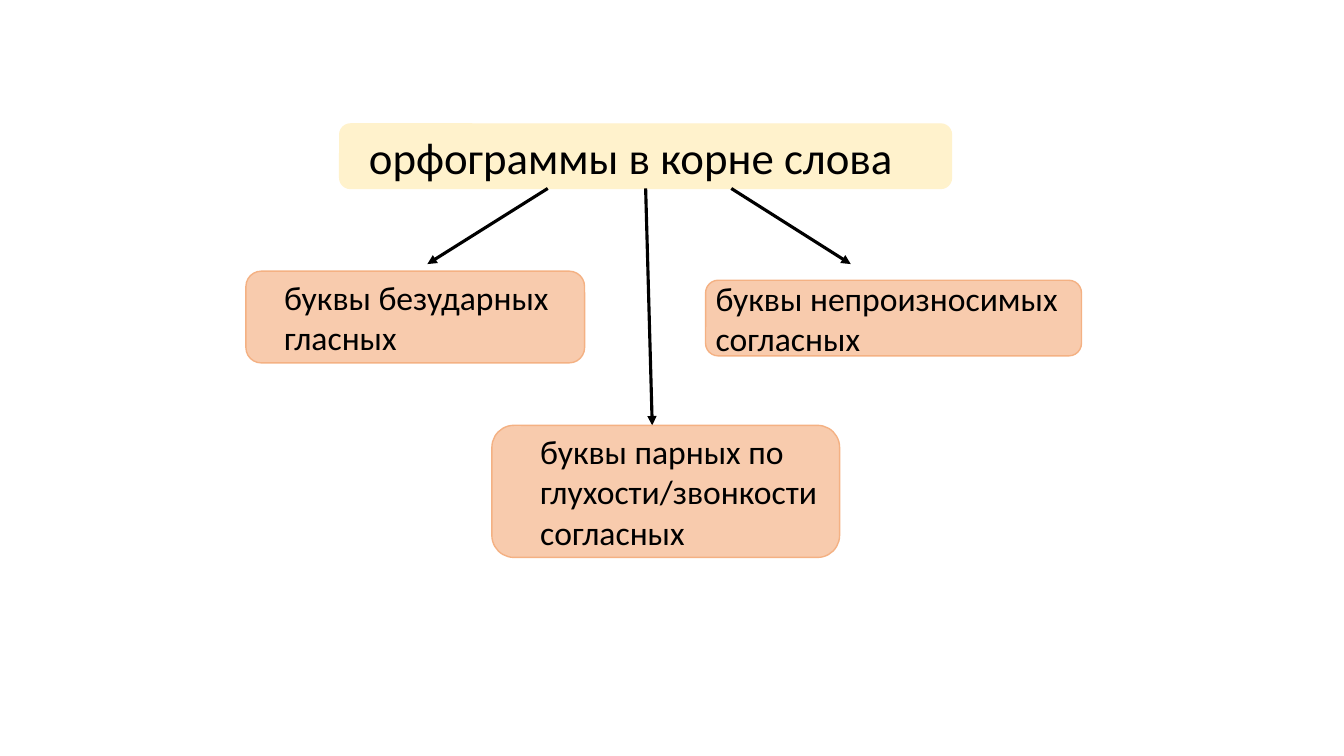
from dataclasses import dataclass

from lxml import etree
from pptx import Presentation
from pptx.dml.color import RGBColor
from pptx.enum.shapes import MSO_CONNECTOR, MSO_SHAPE
from pptx.enum.text import MSO_ANCHOR, MSO_AUTO_SIZE, PP_ALIGN
from pptx.oxml.ns import qn
from pptx.util import Inches, Pt

ROUNDED = MSO_SHAPE.ROUNDED_RECTANGLE
STRAIGHT = MSO_CONNECTOR.STRAIGHT
LEFT = PP_ALIGN.LEFT
MIDDLE = MSO_ANCHOR.MIDDLE
NO_AUTOFIT = MSO_AUTO_SIZE.NONE

SLIDE_W, SLIDE_H = Inches(13.33), Inches(7.5)
INSET = Inches(0.1)
CORNER_INSET = 0.05  # text inset of a rounded box, as a share of its height


@dataclass(frozen=True)
class Theme:
    font: str = "Calibri"
    title_size: float = 32
    branch_size: float = 24
    border: float = 1
    arrow: float = 2.25
    ink: RGBColor = RGBColor(0x00, 0x00, 0x00)
    banner: RGBColor = RGBColor(0xFF, 0xF2, 0xCC)
    branch: RGBColor = RGBColor(0xF8, 0xCB, 0xAD)
    branch_border: RGBColor = RGBColor(0xF4, 0xB1, 0x83)


THEME = Theme()

# Boxes are left, top, width, height in percent of the slide
BANNER = (25.28, 16.4, 45.52, 8.53)
# Each branch: wording, box, text indent in percent of the slide width
BRANCHES = [
    ("буквы безударных гласных", (18.3, 35.87, 25.2, 12.13), 2.1),
    ("буквы парных по глухости/звонкости согласных",
     (36.6, 56.27, 25.87, 17.47), 2.85),
    ("буквы непроизносимых согласных", (52.5, 37.07, 27.97, 10), 0),
]
# Each arrow: start as a share of the banner width, tip in percent of the slide
ARROWS = [(0.34, (31.8, 34.93)), (0.5, (48.53, 56.27)), (0.64, (63.3, 34.93))]


def across(percent):
    return round(SLIDE_W * percent / 100)


def down(percent):
    return round(SLIDE_H * percent / 100)


def place(box):
    left, top, width, height = box
    return across(left), down(top), across(width), down(height)


def add_rounded_box(slide, box, fill, border):
    rounded = slide.shapes.add_shape(ROUNDED, *place(box))
    rounded.shadow.inherit = False
    rounded.fill.solid()
    rounded.fill.fore_color.rgb = fill
    rounded.line.color.rgb = border
    rounded.line.width = Pt(THEME.border)
    return rounded


def write(frame, wording, size, left_margin):
    frame.word_wrap = True
    frame.auto_size = NO_AUTOFIT
    frame.vertical_anchor = MIDDLE
    frame.margin_left = left_margin
    frame.margin_right = frame.margin_top = frame.margin_bottom = 0
    paragraph = frame.paragraphs[0]
    paragraph.alignment = LEFT
    paragraph.line_spacing = 1
    run = paragraph.add_run()
    run.text = wording
    run.font.name = THEME.font
    run.font.size = Pt(size)
    run.font.color.rgb = THEME.ink


def add_heading(slide, box):
    banner = add_rounded_box(slide, box, THEME.banner, THEME.banner)
    heading = slide.shapes.title
    # The banner goes behind the title
    heading.element.addprevious(banner.element)
    left, top, width, height = place(box)
    indent = across(1.42)
    heading.left, heading.top = left + indent, top
    heading.width, heading.height = width - 2 * indent, height
    write(heading.text_frame, "орфограммы в корне слова",
          THEME.title_size, INSET)


def add_branch(slide, wording, box, indent):
    branch = add_rounded_box(slide, box, THEME.branch, THEME.branch_border)
    margin = across(indent) + INSET - round(branch.height * CORNER_INSET)
    write(branch.text_frame, wording, THEME.branch_size, margin)


def add_arrow(slide, box, share, tip):
    left, top, width, height = box
    arrow = slide.shapes.add_connector(
        STRAIGHT, across(left + width * share), down(top + height),
        across(tip[0]), down(tip[1]))
    arrow.line.color.rgb = THEME.ink
    arrow.line.width = Pt(THEME.arrow)
    # Arrowhead, and no shadow
    etree.SubElement(arrow.line._get_or_add_ln(), qn("a:tailEnd"),
                     type="triangle")
    etree.SubElement(arrow.element.spPr, qn("a:effectLst"))


def build_scheme(slide):
    add_heading(slide, BANNER)
    for share, tip in ARROWS:
        add_arrow(slide, BANNER, share, tip)
    for wording, box, indent in BRANCHES:
        add_branch(slide, wording, box, indent)


def main():
    deck = Presentation()
    deck.slide_width, deck.slide_height = SLIDE_W, SLIDE_H
    title_only = deck.slide_layouts.get_by_name("Title Only")
    build_scheme(deck.slides.add_slide(title_only))
    deck.save("out.pptx")


if __name__ == "__main__":
    main()
